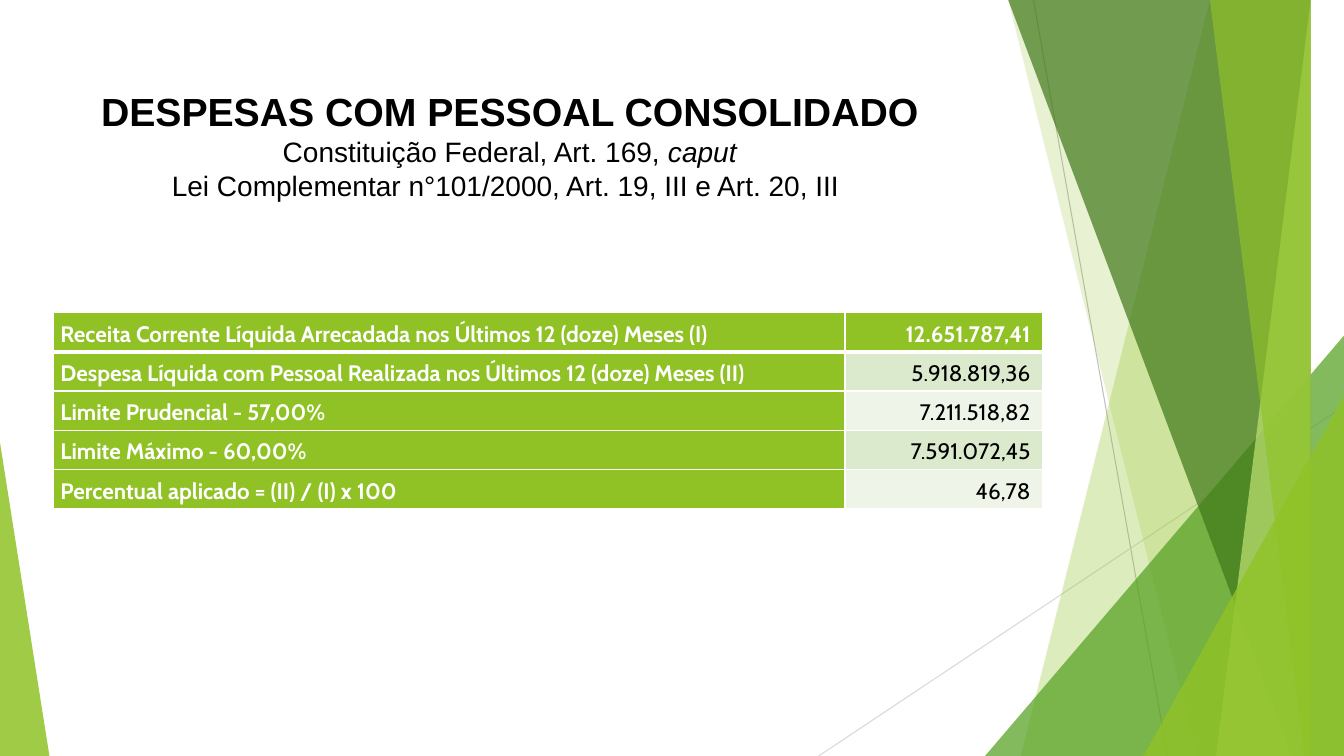
from pptx import Presentation
from pptx.dml.color import RGBColor
from pptx.enum.shapes import MSO_CONNECTOR, MSO_SHAPE
from pptx.enum.text import MSO_ANCHOR, MSO_AUTO_SIZE, PP_ALIGN
from pptx.oxml.ns import qn
from pptx.util import Inches, Pt
from lxml import etree

LINE, TRIANGLE = MSO_CONNECTOR.STRAIGHT, MSO_SHAPE.ISOSCELES_TRIANGLE
TOP, MIDDLE = MSO_ANCHOR.TOP, MSO_ANCHOR.MIDDLE
LEFT, CENTER, RIGHT = PP_ALIGN.LEFT, PP_ALIGN.CENTER, PP_ALIGN.RIGHT
WHITE, BLACK = RGBColor(255, 255, 255), RGBColor(0, 0, 0)
GREEN = RGBColor(0x90, 0xC2, 0x26)
MID_GREEN = RGBColor(0x54, 0xA0, 0x21)
DARK_GREEN = RGBColor(0x3F, 0x78, 0x19)
PALE_GREEN = RGBColor(0xC0, 0xE4, 0x74)
BANDS = [RGBColor(0xEE, 0xF4, 0xE8), RGBColor(0xDB, 0xE9, 0xCD)]
GREY, LIGHT_GREY = RGBColor(0xBF, 0xBF, 0xBF), RGBColor(0xD9, 0xD9, 0xD9)
W, H = 13.33, 7.5


def paint(sp, color, opacity):
    sp.shadow.inherit = False
    sp.fill.solid()
    sp.fill.fore_color.rgb = color
    sp.line.fill.background()
    clr = sp.fill._xPr.find(qn("a:solidFill"))[0]
    etree.SubElement(clr, qn("a:alpha"), val=str(opacity * 1000))


def set_font(r, **formats):
    for name, value in formats.items():
        if name == "color":
            r.font.color.rgb = value
        else:
            setattr(r.font, name, value)


prs = Presentation()
prs.slide_width, prs.slide_height = Inches(W), Inches(H)
s = prs.slides.add_slide(prs.slide_layouts[5])

# Thin lines behind the facets
for x1, y1, x2, y2, color in [(10.25, 0, 11.58, H, GREY),
                              (W, 4.03, 8.12, H, LIGHT_GREY)]:
    ln = s.shapes.add_connector(LINE, *map(Inches, (x1, y1, x2, y2)))
    ln.line.color.rgb = color
    ln.line.width = Pt(0.75)
    etree.SubElement(ln._element.spPr, qn("a:effectLst"))

# Facets: a slanted left edge (top x, bottom x) up to the slide's right edge,
# or a right triangle (left, top, width, apex share) standing on the bottom
facets = [
    ((12.28, 10.04), GREEN, 30),
    ((10.5, 11.83), GREEN, 20),
    ((9.77, 3.33, 3.56, 1), MID_GREEN, 72),
    ((10.21, 12.91), DARK_GREEN, 70),
    ((13.03, 11.92), PALE_GREEN, 70),
    ((11.96, 13.18), GREEN, 65),
    ((11.34, 3.93, 1.99, 1), GREEN, 80),
    ((0, 4.39, 0.49, 0), GREEN, 85),
]
for geometry, color, opacity in facets:
    if len(geometry) == 2:
        x_top, x_bottom = geometry
        fb = s.shapes.build_freeform(x_top, 0, scale=Inches(1))
        fb.add_line_segments([(W, 0), (W, H), (x_bottom, H)], close=True)
        sp = fb.convert_to_shape()
    else:
        x, y, w, apex = geometry
        sp = s.shapes.add_shape(TRIANGLE, *map(Inches, (x, y, w, H - y)))
        sp.adjustments[0] = apex
    paint(sp, color, opacity)

# Title with its legal basis
title = s.shapes.title
title.left, title.top, title.width, title.height = map(Inches, (0.86, 0.82, 8.39, 1.55))
tf = title.text_frame
tf.word_wrap, tf.auto_size, tf.vertical_anchor = True, MSO_AUTO_SIZE.NONE, TOP
lines = [
    [("DESPESAS COM PESSOAL CONSOLIDADO", dict(size=Pt(28), bold=True))],
    [("Constituição Federal, Art. 169, ", {}), ("caput", dict(italic=True))],
    [("Lei Complementar n°101/2000, Art. 19, III e Art. 20, III ", {})],
]
for i, runs in enumerate(lines):
    p = tf.paragraphs[0] if i == 0 else tf.add_paragraph()
    p.alignment = CENTER
    for text, formats in runs:
        r = p.add_run()
        r.text = text
        set_font(r, **(dict(name="Arial", size=Pt(20), color=BLACK) | formats))

# Expense table
rows = [
    ("Receita Corrente Líquida Arrecadada nos Últimos 12 (doze) Meses (I)", "12.651.787,41 "),
    ("Despesa Líquida com Pessoal Realizada nos Últimos 12 (doze) Meses (II)", "5.918.819,36 "),
    ("Limite Prudencial - 57,00%", "7.211.518,82 "),
    ("Limite Máximo - 60,00%", "7.591.072,45 "),
    ("Percentual aplicado = (II) / (I) x 100", "46,78 "),
]
ROW_H, COLS = 0.39, (7.85, 1.96)
tbl = s.shapes.add_table(len(rows), len(COLS), Inches(0.53), Inches(3.1),
                         Inches(sum(COLS)), Inches(ROW_H * len(rows))).table
tbl.first_col = True
for col, width in zip(tbl.columns, COLS):
    col.width = Inches(width)

for i, row in enumerate(rows):
    tbl.rows[i].height = Inches(ROW_H)
    for j, text in enumerate(row):
        heading = i == 0 or j == 0
        cell = tbl.cell(i, j)
        cell.margin_left = cell.margin_right = Inches(0.07)
        cell.margin_top = cell.margin_bottom = Inches(0.01)
        cell.vertical_anchor = MIDDLE

        # White borders, thicker under the first row
        tcPr = cell._tc.get_or_add_tcPr()
        for side in "LRTB":
            thick = (i, side) in [(0, "B"), (1, "T")]
            ln = etree.SubElement(tcPr, qn(f"a:ln{side}"), w=str(Pt(3 if thick else 1)))
            fill = etree.SubElement(ln, qn("a:solidFill"))
            etree.SubElement(fill, qn("a:srgbClr"), val=str(WHITE))
        cell.fill.solid()
        cell.fill.fore_color.rgb = GREEN if heading else BANDS[i % 2]

        p = cell.text_frame.paragraphs[0]
        p.alignment = RIGHT if j else LEFT
        p.line_spacing = 1.15
        r = p.add_run()
        r.text = text
        set_font(r, name="Cabin", size=Pt(16), bold=heading,
                 color=WHITE if heading else BLACK)

prs.save("out.pptx")
